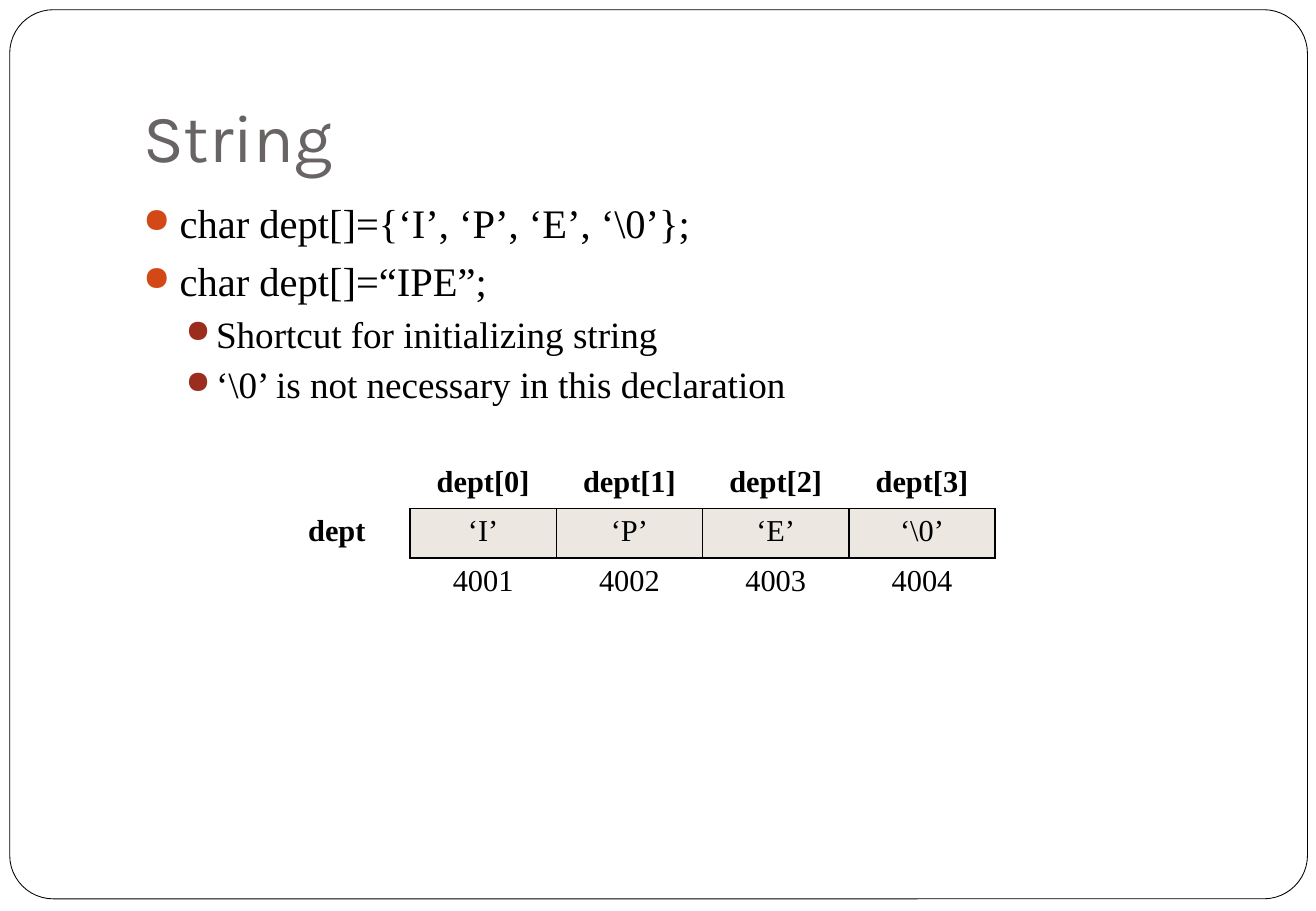
from pptx import Presentation
from pptx.dml.color import RGBColor
from pptx.enum.shapes import MSO_SHAPE
from pptx.enum.text import MSO_ANCHOR, PP_ALIGN
from pptx.oxml import parse_xml
from pptx.oxml.ns import nsdecls
from pptx.util import Inches, Pt


def rgb(color):
    return RGBColor.from_string(color)


def add_run(p, text, size, font="Times New Roman", color="000000", bold=False):
    r = p.add_run()
    r.text = text
    for name, value in {"size": Pt(size), "name": font, "bold": bold}.items():
        setattr(r.font, name, value)
    r.font.color.rgb = rgb(color)


prs = Presentation()
prs.slide_width, prs.slide_height = Inches(10.83), Inches(7.5)
s = prs.slides.add_slide(prs.slide_layouts[6])

# Rounded frame
frame = s.shapes.add_shape(MSO_SHAPE.ROUNDED_RECTANGLE, Inches(0.08), Inches(0.08),
                           Inches(10.68), Inches(7.32))
frame.adjustments[0] = 0.049
frame.shadow.inherit = False
frame.fill.solid()
frame.fill.fore_color.rgb = rgb("FFFFFF")
frame.line.color.rgb = rgb("000000")
frame.line.width = Pt(0.5)

# Title
tf = s.shapes.add_textbox(Inches(1.08), Inches(0.3), Inches(9.21), Inches(1.25)).text_frame
for name, value in {"word_wrap": True, "vertical_anchor": MSO_ANCHOR.BOTTOM,
                    "margin_bottom": Inches(0.1)}.items():
    setattr(tf, name, value)
add_run(tf.paragraphs[0], "String", 40, "Karla", "696464")

# Bullets
levels = [
    {"size": 24, "before": 5.8, "left": 0.3, "hang": 0.3, "color": "D34817"},
    {"size": 22, "before": 3.7, "left": 0.6, "hang": 0.25, "color": "9B2D1F"},
]
bullets = [
    (0, "char dept[]={‘I’, ‘P’, ‘E’, ‘\\0’};"),
    (0, "char dept[]=“IPE”;"),
    (1, "Shortcut for initializing string"),
    (1, "‘\\0’ is not necessary in this declaration"),
]
tf = s.shapes.add_textbox(Inches(1.08), Inches(1.58), Inches(9.21), Inches(5)).text_frame
tf.word_wrap = True
for i, (level, text) in enumerate(bullets):
    p = tf.add_paragraph() if i else tf.paragraphs[0]
    fmt = levels[level]
    p.level = level
    p.space_before = Pt(fmt["before"])
    pPr = p._p.get_or_add_pPr()
    pPr.set("marL", str(Inches(fmt["left"])))
    pPr.set("indent", str(-Inches(fmt["hang"])))
    for tag in (f'buClr {nsdecls("a")}><a:srgbClr val="{fmt["color"]}"/></a:buClr',
                f'buSzPct {nsdecls("a")} val="85000"/',
                f'buChar {nsdecls("a")} char="●"/'):
        pPr.append(parse_xml(f"<a:{tag}>"))
    add_run(p, text, fmt["size"])

# Memory table
rows = [
    ["", "dept[0]", "dept[1]", "dept[2]", "dept[3]"],
    ["dept", "‘I’", "‘P’", "‘E’", "‘\\0’"],
    ["", "4001", "4002", "4003", "4004"],
]
table = s.shapes.add_table(3, 5, Inches(2.17), Inches(3.78), Inches(6.02), Inches(1.22)).table
table.first_row = table.horz_banding = False
for column in table.columns:
    column.width = Inches(1.204)
for row in table.rows:
    row.height = Inches(0.407)

for i, row in enumerate(rows):
    for j, text in enumerate(row):
        cell = table.cell(i, j)
        boxed = i == 1 and j > 0
        tcPr = cell._tc.get_or_add_tcPr()
        if boxed:
            cell.fill.solid()
            cell.fill.fore_color.rgb = rgb("A28E6A")
            tcPr.find(".//{*}srgbClr").append(
                parse_xml(f'<a:alpha {nsdecls("a")} val="20000"/>'))
        else:
            cell.fill.background()

        # Sides that touch a boxed cell are drawn
        drawn = {"L": boxed, "R": boxed or (i, j) == (1, 0),
                 "T": boxed or (i == 2 and j > 0), "B": boxed or (i == 0 and j > 0)}
        for k, (side, on) in enumerate(drawn.items()):
            paint = '<a:solidFill><a:srgbClr val="000000"/></a:solidFill>' if on else "<a:noFill/>"
            tcPr.insert(k, parse_xml(
                f'<a:ln{side} {nsdecls("a")} w="{Pt(1)}">{paint}</a:ln{side}>'))

        p = cell.text_frame.paragraphs[0]
        p.alignment = PP_ALIGN.CENTER
        if text:
            add_run(p, text, 18, bold=i == 0 or j == 0)

prs.save("out.pptx")
